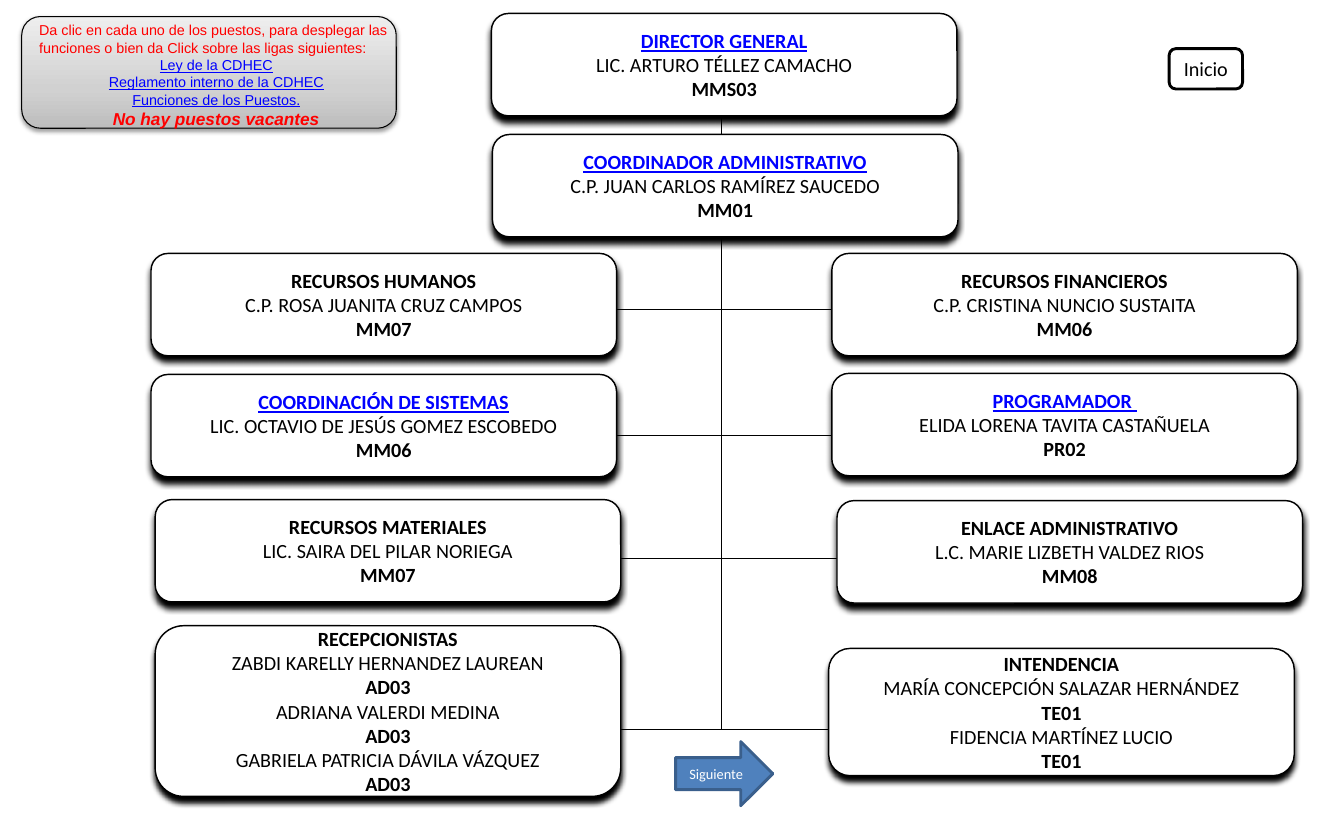
from copy import deepcopy

from lxml.etree import SubElement
from pptx import Presentation
from pptx.dml.color import RGBColor
from pptx.enum.shapes import MSO_CONNECTOR, MSO_SHAPE
from pptx.enum.text import MSO_ANCHOR, PP_ALIGN
from pptx.oxml.ns import qn
from pptx.util import Inches, Pt

BLACK = RGBColor(0x00, 0x00, 0x00)
WHITE = RGBColor(0xFF, 0xFF, 0xFF)
RED = RGBColor(0xFF, 0x00, 0x00)
LINK = RGBColor(0x00, 0x00, 0xFF)
BLUE = RGBColor(0x4F, 0x81, 0xBD)
NAVY = RGBColor(0x3A, 0x5F, 0x8C)
GREYS = [
    (0, RGBColor(0xBD, 0xBD, 0xBD)),
    (0.35, RGBColor(0xD1, 0xD1, 0xD1)),
    (1, RGBColor(0xEE, 0xEE, 0xEE)),
]

WIDE, HIGH = 4.5, 0.99
TRUNK = 6.97
RUNGS = [(5.79, 8.09, 2.99), (5.79, 8.09, 4.21), (5.79, 8.09, 5.4), (5.74, 8.04, 7.05)]
POSTS = [
    (4.75, 0.13, HIGH, True, "DIRECTOR GENERAL", [("LIC. ARTURO TÉLLEZ CAMACHO", "MMS03")]),
    (4.76, 1.3, HIGH, True, "COORDINADOR ADMINISTRATIVO",
     [("C.P. JUAN CARLOS RAMÍREZ SAUCEDO", "MM01")]),
    (1.46, 2.45, HIGH, False, "RECURSOS HUMANOS", [("C.P. ROSA JUANITA CRUZ CAMPOS", "MM07")]),
    (8.04, 2.45, HIGH, False, "RECURSOS FINANCIEROS",
     [("C.P. CRISTINA NUNCIO SUSTAITA", "MM06")]),
    (1.46, 3.62, HIGH, True, "COORDINACIÓN DE SISTEMAS",
     [("LIC. OCTAVIO DE JESÚS GOMEZ ESCOBEDO", "MM06")]),
    (8.04, 3.61, HIGH, True, "PROGRAMADOR ", [("ELIDA LORENA TAVITA CASTAÑUELA", "PR02")]),
    (1.5, 4.83, HIGH, False, "RECURSOS MATERIALES", [("LIC. SAIRA DEL PILAR NORIEGA", "MM07")]),
    (8.09, 4.84, HIGH, False, "ENLACE ADMINISTRATIVO",
     [("L.C. MARIE LIZBETH VALDEZ RIOS", "MM08")]),
    (1.5, 6.05, 1.65, False, "RECEPCIONISTAS",
     [("ZABDI KARELLY HERNANDEZ LAUREAN", "AD03"), ("ADRIANA VALERDI MEDINA", "AD03"),
      ("GABRIELA PATRICIA DÁVILA VÁZQUEZ", "AD03")]),
    (8.01, 6.27, 1.23, False, "INTENDENCIA",
     [("MARÍA CONCEPCIÓN SALAZAR HERNÁNDEZ", "TE01"), ("FIDENCIA MARTÍNEZ LUCIO", "TE01")]),
]
HELP = ("Da clic en cada uno de los puestos, para desplegar las funciones "
        "o bien da Click sobre las ligas siguientes:")
LINKS = ["Ley de la CDHEC", "Reglamento interno de la CDHEC", "Funciones de los Puestos."]


def write(frame, text, size=14, face="Calibri", color=BLACK, bold=False,
          slant=False, under=False, align=PP_ALIGN.CENTER):
    """Add one formatted paragraph to a text frame."""
    para = frame.paragraphs[0] if not frame.text else frame.add_paragraph()
    para.alignment = align
    run = para.add_run()
    run.text = text
    font = run.font
    font.size, font.name, font.color.rgb = Pt(size), face, color
    font.bold, font.italic, font.underline = bold, slant, under


def add_box(slide, kind, left, top, width, height, fill=WHITE, edge=BLACK, weight=1):
    """Add a preset shape with a plain fill and no shadow."""
    box = slide.shapes.add_shape(kind, Inches(left), Inches(top), Inches(width), Inches(height))
    box.shadow.inherit = False
    box.fill.solid()
    box.fill.fore_color.rgb = fill
    box.line.color.rgb = edge
    box.line.width = Pt(weight)
    box.text_frame.vertical_anchor = MSO_ANCHOR.MIDDLE
    return box


def add_shade(box, blur, dist, alpha):
    """Give a shape a black shadow that falls straight down."""
    list_ = box._element.spPr.find(qn("a:effectLst"))
    shade = SubElement(list_, qn("a:outerShdw"), blurRad=str(Pt(blur)),
                       dist=str(Pt(dist)), dir="5400000", rotWithShape="0")
    color = SubElement(shade, qn("a:srgbClr"), val=str(BLACK))
    SubElement(color, qn("a:alpha"), val=str(alpha * 1000))


def add_line(slide, left, top, right, low):
    """Add a thin black line of the chart."""
    line = slide.shapes.add_connector(
        MSO_CONNECTOR.STRAIGHT, Inches(left), Inches(top), Inches(right), Inches(low))
    line.line.color.rgb = BLACK
    line.line.width = Pt(0.75)
    SubElement(line._element.spPr, qn("a:effectLst"))


def add_post(slide, left, top, height, linked, title, staff):
    """Add the box of a post with its title, staff and codes."""
    box = add_box(slide, MSO_SHAPE.ROUNDED_RECTANGLE, left, top, WIDE, height)
    add_shade(box, 4, 4, 100)
    frame = box.text_frame
    frame.word_wrap = False
    frame.margin_left = frame.margin_right = Inches(0.17)
    frame.margin_top = frame.margin_bottom = Inches(0.09)
    write(frame, title, color=LINK if linked else BLACK, bold=True, under=linked)
    for name, code in staff:
        write(frame, name)
        write(frame, code, bold=True)


def add_help(slide):
    """Add the grey panel with the hints and links."""
    panel = add_box(slide, MSO_SHAPE.ROUNDED_RECTANGLE, 0.21, 0.16, 3.62, 1.08, weight=0.75)
    add_shade(panel, 3.1, 1.6, 38)
    panel.fill.gradient()
    panel.fill.gradient_angle = 90
    stops = panel._element.spPr.find(".//" + qn("a:gsLst"))
    stops.insert(1, deepcopy(stops[0]))
    for stop, (place, color) in zip(panel.fill.gradient_stops, GREYS):
        stop.position = place
        stop.color.rgb = color
    frame = slide.shapes.add_textbox(
        Inches(0.28), Inches(0.16), Inches(3.62), Inches(1.14)).text_frame
    frame.word_wrap = True
    write(frame, HELP, size=10, face="Arial", color=RED, align=PP_ALIGN.LEFT)
    for link in LINKS:
        write(frame, link, size=10, face="Arial", color=LINK, under=True)
    write(frame, "No hay puestos vacantes", size=12, face="Arial", color=RED,
          bold=True, slant=True)


def main():
    """Build the staff chart and save it."""
    deck = Presentation()
    deck.slide_width, deck.slide_height = Inches(12.99), Inches(7.88)
    slide = deck.slides.add_slide(deck.slide_layouts[6])
    for left, right, top in RUNGS:
        add_line(slide, left, top, right, top)
    for top, low in [(1.12, 7.06), (1.89, 3.1)]:
        add_line(slide, TRUNK, top, TRUNK, low)
    for post in POSTS:
        add_post(slide, *post)
    home = add_box(slide, MSO_SHAPE.ROUNDED_RECTANGLE, 11.3, 0.47, 0.71, 0.39, weight=2)
    write(home.text_frame, "Inicio")
    add_help(slide)
    arrow = add_box(slide, MSO_SHAPE.RIGHT_ARROW, 6.53, 7.17, 0.94, 0.62, BLUE, NAVY, 2)
    write(arrow.text_frame, "Siguiente", size=10, color=WHITE)
    deck.save("out.pptx")


if __name__ == "__main__":
    main()
